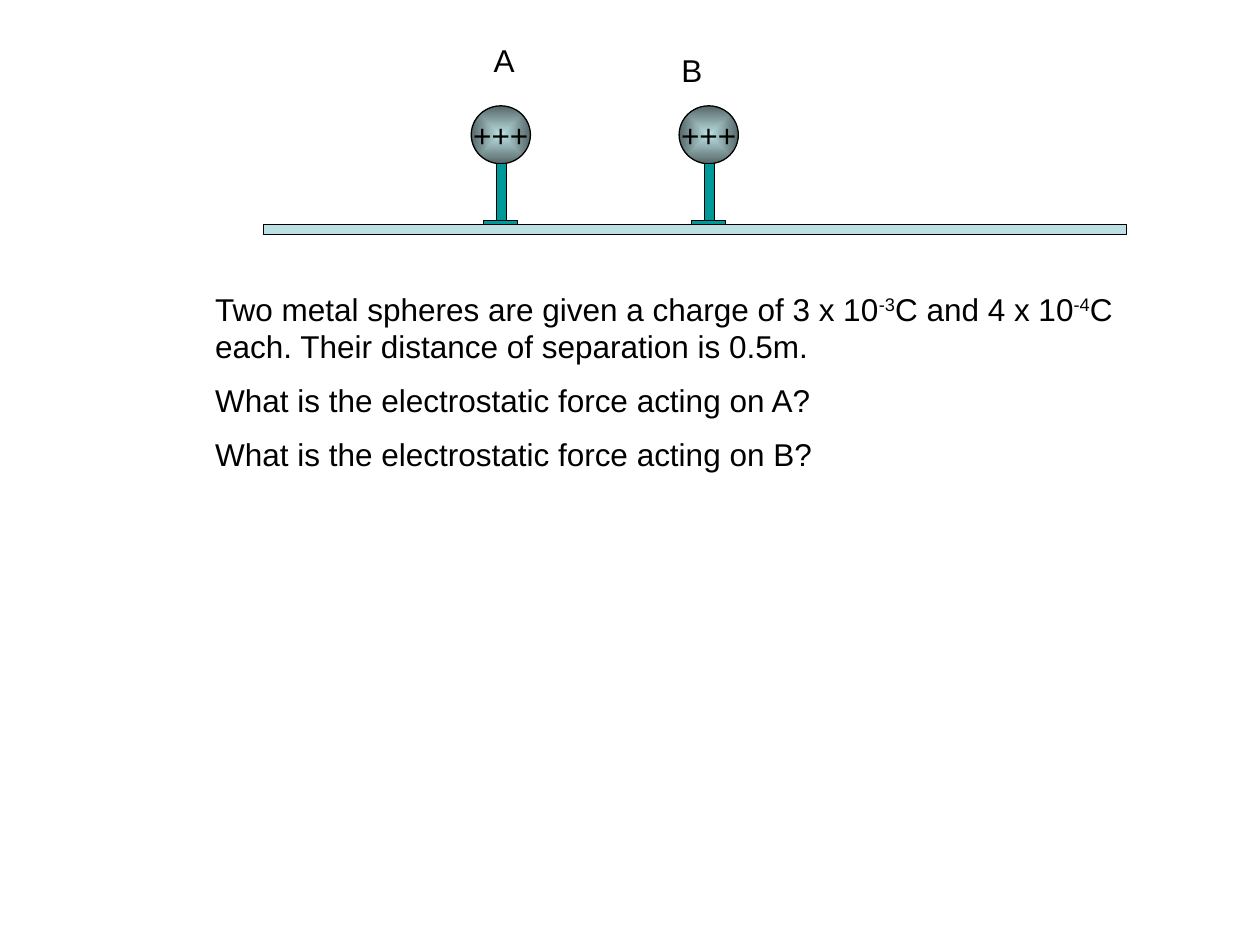
import dataclasses

import lxml.etree
import pptx
import pptx.dml.color
import pptx.enum.shapes
import pptx.enum.text
import pptx.oxml
import pptx.oxml.ns
import pptx.util

Inches = pptx.util.Inches
Pt = pptx.util.Pt
SHAPE = pptx.enum.shapes.MSO_SHAPE


@dataclasses.dataclass(frozen=True)
class Theme:
    font: str = "Arial"
    size: int = 18
    space: int = 9
    line_width: float = 0.75
    ink: str = "000000"
    stand: str = "009999"
    pale: str = "BBE0E3"
    shade: str = "566768"


THEME = Theme()


def rgb(value):
    return pptx.dml.color.RGBColor.from_string(value)


def add_run(p, text, superscript=False):
    r = p.add_run()
    r.text = text
    r.font.name = THEME.font
    r.font.size = Pt(THEME.size)
    r.font.color.rgb = rgb(THEME.ink)
    if superscript:
        r._r.get_or_add_rPr().set("baseline", "30000")


def add_solid(shapes, kind, x, y, w, h, color):
    sp = shapes.add_shape(kind, Inches(x), Inches(y), Inches(w), Inches(h))
    sp.shadow.inherit = False
    sp.fill.solid()
    sp.fill.fore_color.rgb = rgb(color)
    sp.line.color.rgb = rgb(THEME.ink)
    sp.line.width = Pt(THEME.line_width)
    return sp


def shade_from_centre(sp):
    sp.fill.gradient()
    for stop, color, position in zip(sp.fill.gradient_stops, (THEME.pale, THEME.shade), (0, 1)):
        stop.color.rgb = rgb(color)
        stop.position = position
    grad = sp._element.spPr.find(pptx.oxml.ns.qn("a:gradFill"))
    grad.remove(grad.find(pptx.oxml.ns.qn("a:lin")))
    route = lxml.etree.SubElement(grad, pptx.oxml.ns.qn("a:path"), path="shape")
    lxml.etree.SubElement(
        route, pptx.oxml.ns.qn("a:fillToRect"), l="50000", t="50000", r="50000", b="50000"
    )


def add_charged_sphere(s, x):
    group = s.shapes.add_group_shape()
    sphere = add_solid(group.shapes, SHAPE.OVAL, x, 0.84, 0.47, 0.46, THEME.pale)
    shade_from_centre(sphere)
    tf = sphere.text_frame
    tf.word_wrap = False
    tf.vertical_anchor = pptx.enum.text.MSO_ANCHOR.MIDDLE
    p = tf.paragraphs[0]
    p.alignment = pptx.enum.text.PP_ALIGN.CENTER
    add_run(p, "+++")
    add_solid(group.shapes, SHAPE.RECTANGLE, x + 0.2, 1.3, 0.08, 0.46, THEME.stand)
    add_solid(group.shapes, SHAPE.RECTANGLE, x + 0.1, 1.75, 0.27, 0.03, THEME.stand)


def add_text(s, x, y, w, h, paragraphs):
    tf = s.shapes.add_textbox(Inches(x), Inches(y), Inches(w), Inches(h)).text_frame
    tf.word_wrap = True
    tf.auto_size = pptx.enum.text.MSO_AUTO_SIZE.SHAPE_TO_FIT_TEXT
    for i, runs in enumerate(paragraphs):
        p = tf.add_paragraph() if i else tf.paragraphs[0]
        p.space_before = Pt(THEME.space)
        for run in runs:
            add_run(p, *run)


def main():
    prs = pptx.Presentation()
    prs.slide_width = Inches(10)
    prs.slide_height = Inches(7.5)
    s = prs.slides.add_slide(prs.slide_layouts[6])

    for x in (5.39, 3.74):
        add_charged_sphere(s, x)
    add_solid(s.shapes, SHAPE.RECTANGLE, 2.09, 1.78, 6.85, 0.08, THEME.pale)

    add_text(s, 1.61, 2.25, 7.4, 1.6, [
        [
            ("Two metal spheres are given a charge of 3 x 10",),
            ("-3", True),
            ("C and 4 x 10",),
            ("-4", True),
            ("C each. Their distance of separation is 0.5m.",),
        ],
        [("What is the electrostatic force acting on A?",)],
        [("What is the electrostatic force acting on B?",)],
    ])
    for label, x, y in (("A", 3.82, 0.28), ("B", 5.31, 0.36)):
        add_text(s, x, y, 0.94, 0.4, [[(label,)]])

    prs.save("out.pptx")


if __name__ == "__main__":
    main()
